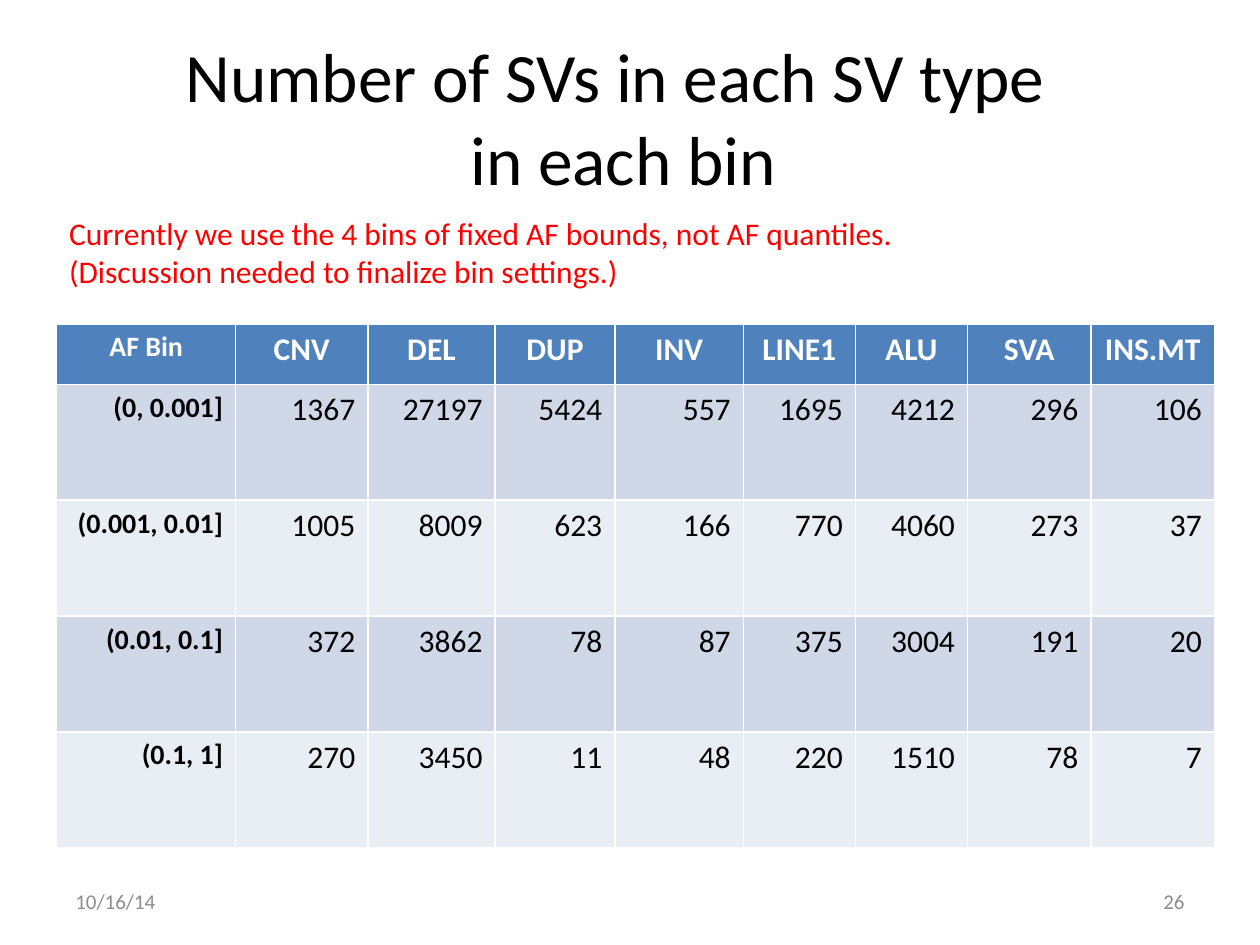
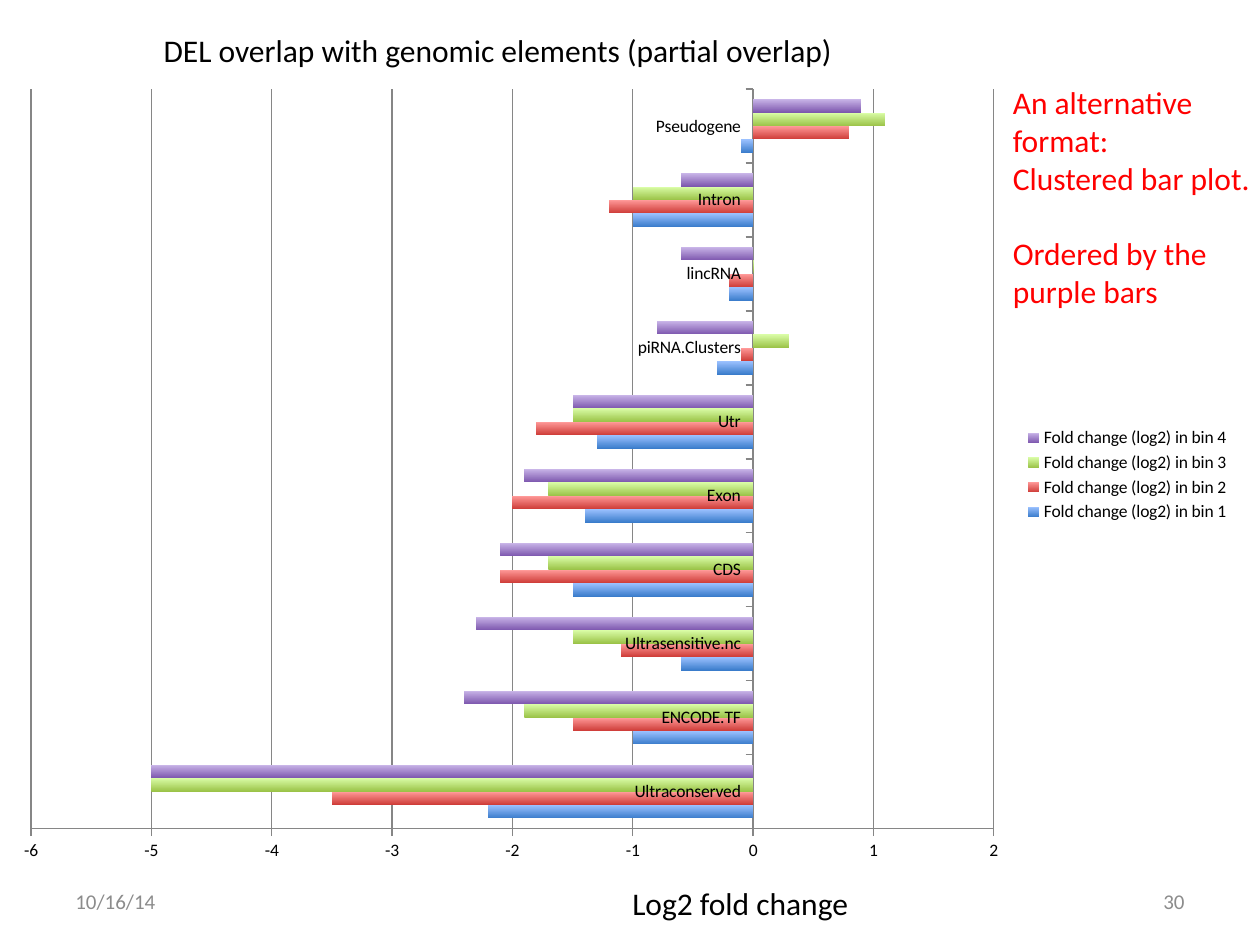
"""Build two slides on structural variants: a table of counts by bin and a clustered bar chart."""
from dataclasses import dataclass

from lxml import etree
from pptx import Presentation
from pptx import util as u
from pptx.chart.data import CategoryChartData
from pptx.dml.color import RGBColor
from pptx.enum import chart as ch
from pptx.enum import text
from pptx.oxml.ns import qn


@dataclass(frozen=True)
class Theme:
    font: str = "Calibri"
    ink: str = "000000"
    white: str = "FFFFFF"
    note: str = "FF0000"
    footer: str = "8C8C8C"
    grid: str = "868686"
    header: str = "4F81BD"
    bands: tuple = ("D0D8E8", "E9EDF4")
    bars: tuple = (("3A7CCB", "9BC1FF"), ("CE3B37", "FF9A99"),
                   ("9BC348", "DAFDA7"), ("7D57AE", "C9B5E8"))
    title_pt: float = 39.6
    body_pt: int = 18
    bin_pt: int = 16
    footer_pt: int = 12
    chart_pt: int = 10


T = Theme()
LEFT, CENTER, RIGHT = text.PP_ALIGN.LEFT, text.PP_ALIGN.CENTER, text.PP_ALIGN.RIGHT
TOP, MIDDLE = text.MSO_ANCHOR.TOP, text.MSO_ANCHOR.MIDDLE


def write(tf, lines, size=T.body_pt, color=T.ink, bold=False, align=LEFT,
          anchor=TOP, wrap=True, gap_before=None):
    tf.word_wrap = wrap
    tf.vertical_anchor = anchor
    for i, line in enumerate(lines):
        p = tf.add_paragraph() if i else tf.paragraphs[0]
        p.text = line
        p.alignment = align
        if i == gap_before:
            p.space_before = u.Pt(size * 1.2)
        for r in p.runs:
            r.font.name = T.font
            r.font.size = u.Pt(size)
            r.font.bold = bold
            r.font.color.rgb = RGBColor.from_string(color)


prs = Presentation()
prs.slide_width, prs.slide_height = u.Inches(10), u.Inches(7.5)
table_slide, chart_slide = [prs.slides.add_slide(prs.slide_layouts[6]) for _ in range(2)]

columns = [("AF Bin", 1.42), ("CNV", 1.05), ("DEL", 1.01), ("DUP", 0.95), ("INV", 1.02),
           ("LINE1", 0.89), ("ALU", 0.89), ("SVA", 0.98), ("INS.MT", 0.98)]
counts = [
    ("(0, 0.001]", 1367, 27197, 5424, 557, 1695, 4212, 296, 106),
    ("(0.001, 0.01]", 1005, 8009, 623, 166, 770, 4060, 273, 37),
    ("(0.01, 0.1]", 372, 3862, 78, 87, 375, 3004, 191, 20),
    ("(0.1, 1]", 270, 3450, 11, 48, 220, 1510, 78, 7),
]
rows = [[name for name, _ in columns], *counts]
table = table_slide.shapes.add_table(len(rows), len(columns), u.Inches(0.45), u.Inches(2.57),
                                     u.Inches(9.2), u.Inches(4.16)).table
for col, (_, width) in zip(table.columns, columns):
    col.width = u.Inches(width)
for i, row in enumerate(rows):
    table.rows[i].height = u.Inches(0.92 if i else 0.48)
    for j, value in enumerate(row):
        cell = table.cell(i, j)
        cell.fill.solid()
        cell.fill.fore_color.rgb = RGBColor.from_string(T.bands[(i - 1) % 2] if i else T.header)
        write(cell.text_frame, [str(value)], size=T.body_pt if j else T.bin_pt,
              color=T.ink if i else T.white, bold=i == 0 or j == 0,
              align=RIGHT if i else CENTER)

fold_changes = [
    ("Ultraconserved", -2.2, -3.5, -5, -5),
    ("ENCODE.TF", -1, -1.5, -1.9, -2.4),
    ("Ultrasensitive.nc", -0.6, -1.1, -1.5, -2.3),
    ("CDS", -1.5, -2.1, -1.7, -2.1),
    ("Exon", -1.4, -2, -1.7, -1.9),
    ("Utr", -1.3, -1.8, -1.5, -1.5),
    ("piRNA.Clusters", -0.3, -0.1, 0.3, -0.8),
    ("lincRNA", -0.2, -0.2, 0, -0.6),
    ("Intron", -1, -1.2, -1, -0.6),
    ("Pseudogene", -0.1, 0.8, 1.1, 0.9),
]
elements, *bins = zip(*fold_changes)
data = CategoryChartData()
data.categories = elements
for n, values in enumerate(bins, 1):
    data.add_series(f"Fold change (log2) in bin {n}", values)
chart = chart_slide.shapes.add_chart(ch.XL_CHART_TYPE.BAR_CLUSTERED, u.Inches(0), u.Inches(0.58),
                                     u.Inches(9.86), u.Inches(6.38), data).chart
chart.has_title = False
chart.font.name = T.font
chart.font.size = u.Pt(T.chart_pt)
chart.font.color.rgb = RGBColor.from_string(T.ink)
chart.has_legend = True
chart.legend.position = ch.XL_LEGEND_POSITION.RIGHT
chart.legend.include_in_layout = False

plot = chart.plots[0]
plot.gap_width, plot.overlap, plot.vary_by_categories = 150, 0, False
for series, (dark, light) in zip(plot.series, T.bars):
    series.invert_if_negative = False
    fill = series.format.fill
    fill.gradient()
    fill.gradient_angle = 90
    for stop, color in zip(fill.gradient_stops, (dark, light)):
        stop.color.rgb = RGBColor.from_string(color)

axis = chart.value_axis
axis.minimum_scale, axis.maximum_scale, axis.major_unit = -6, 2, 1
axis.has_major_gridlines = True
axis.tick_labels.number_format = "General"
axis.tick_labels.number_format_is_linked = False
for ax in (axis, chart.category_axis):
    ax.major_tick_mark = ch.XL_TICK_MARK.OUTSIDE
for line in (axis.format.line, axis.major_gridlines.format.line, chart.category_axis.format.line):
    line.color.rgb = RGBColor.from_string(T.grid)
    line.width = u.Pt(0.75)

area = chart._chartSpace.find(".//" + qn("c:plotArea"))
for old in area.findall(qn("c:layout")):
    area.remove(old)
layout = etree.Element(qn("c:layout"))
area.insert(0, layout)
manual = etree.SubElement(layout, qn("c:manualLayout"))
for tag, val in (("layoutTarget", "inner"), ("xMode", "edge"), ("yMode", "edge"),
                 ("x", 0.025), ("y", 0.02), ("w", 0.775), ("h", 0.92)):
    etree.SubElement(manual, qn("c:" + tag)).set("val", str(val))

labels = [
    (table_slide, (0.22, 0.3, 9.45, 1.25), ["Number of SVs in each SV type \vin each bin"],
     dict(size=T.title_pt, align=CENTER, anchor=MIDDLE)),
    (table_slide, (0.45, 1.65, 6.82, 0.71),
     ["Currently we use the 4 bins of fixed AF bounds, not AF quantiles.",
      "(Discussion needed to finalize bin settings.)"], dict(color=T.note, wrap=False)),
    (chart_slide, (1.2, 0.2, 5.57, 0.4),
     ["DEL overlap with genomic elements (partial overlap)"], dict(wrap=False)),
    (chart_slide, (7.94, 0.61, 2.33, 1.92),
     ["An alternative format:", "Clustered bar plot.", "Ordered by the purple bars"],
     dict(color=T.note, gap_before=2)),
    (chart_slide, (4.92, 6.97, 1.94, 0.4), ["Log2 fold change"], dict(wrap=False)),
]
for s, number in ((table_slide, "26"), (chart_slide, "30")):
    for left, line, align in ((0.5, "10/16/14", LEFT), (7.17, number, RIGHT)):
        labels.append((s, (left, 6.95, 2.33, 0.4), [line],
                       dict(size=T.footer_pt, color=T.footer, align=align, anchor=MIDDLE)))
for s, box, lines, style in labels:
    sp = s.shapes.add_textbox(*map(u.Inches, box))
    write(sp.text_frame, lines, **style)

prs.save("out.pptx")
